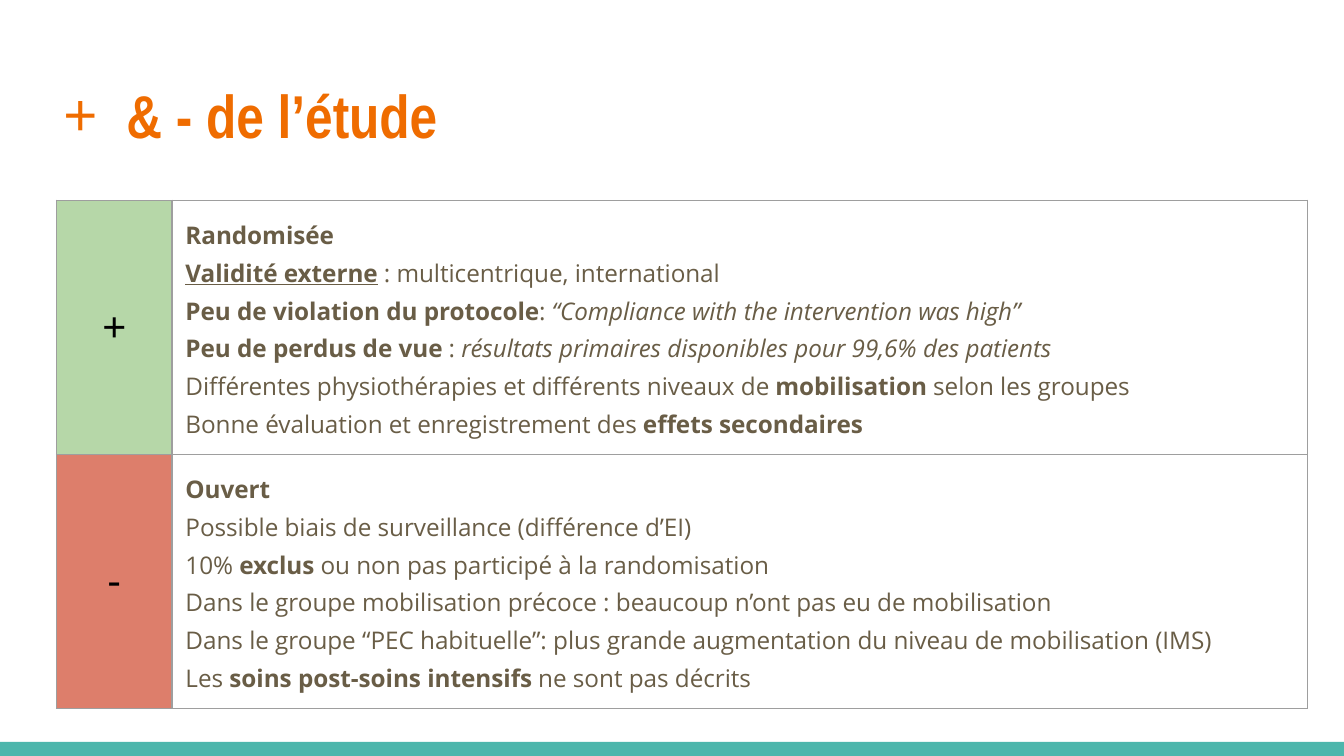
from copy import deepcopy

from lxml import etree
from pptx import Presentation
from pptx.dml.color import RGBColor
from pptx.enum.shapes import MSO_SHAPE
from pptx.enum.text import MSO_ANCHOR, PP_ALIGN
from pptx.oxml.ns import qn
from pptx.util import Inches, Pt

ORANGE, BROWN, TEAL, GREY = "EF6C00", "695D46", "4DB6AC", "9E9E9E"

# Each line is a list of (text, style): b bold, i italic, u underline
STRENGTHS = [
    [("Randomisée", "b")],
    [("Validité externe", "bu"), (" : multicentrique, international", "")],
    [("Peu de violation du protocole", "b"), (": ", ""),
     ("“Compliance with the intervention was high”", "i")],
    [("Peu de perdus de vue", "b"), (" : ", ""),
     ("résultats primaires disponibles pour 99,6% des patients", "i")],
    [("Différentes physiothérapies et différents niveaux de ", ""),
     ("mobilisation", "b"), (" selon les groupes", "")],
    [("Bonne évaluation et enregistrement des ", ""), ("effets secondaires", "b")],
]
WEAKNESSES = [
    [("Ouvert", "b")],
    [("Possible biais de surveillance (différence d’EI)", "")],
    [("10% ", ""), ("exclus", "b"), (" ou non pas participé à la randomisation", "")],
    [("Dans le groupe mobilisation précoce : beaucoup n’ont pas eu de mobilisation", "")],
    [("Dans le groupe “PEC habituelle”: plus grande augmentation du niveau de "
      "mobilisation (IMS)", "")],
    [("Les ", ""), ("soins post-soins intensifs", "b"), (" ne sont pas décrits", "")],
]


def rgb(color):
    return RGBColor.from_string(color)


def add_run(p, text, size=13, font="Open Sans", color=BROWN, style=""):
    r = p.add_run()
    r.text = text
    f = r.font
    f.size, f.name = Pt(size), font
    f.color.rgb = rgb(color)
    f.bold, f.italic, f.underline = "b" in style, "i" in style, "u" in style
    return r


def add_break(p, r):
    """Break the line, keeping the format of the run before it."""
    p.add_line_break()
    p._p.findall(qn("a:br"))[-1].append(deepcopy(r._r.rPr))


def set_bullet(p, char, color, font, left, hanging):
    pPr = p._p.get_or_add_pPr()
    pPr.set("marL", str(Inches(left)))
    pPr.set("indent", str(-Inches(hanging)))
    clr = etree.SubElement(pPr, qn("a:buClr"))
    etree.SubElement(clr, qn("a:srgbClr"), val=color)
    etree.SubElement(pPr, qn("a:buFont"), typeface=font)
    etree.SubElement(pPr, qn("a:buChar"), char=char)


def set_borders(cell, color, width):
    tcPr = cell._tc.get_or_add_tcPr()
    for i, side in enumerate(("lnL", "lnR", "lnT", "lnB")):
        ln = etree.Element(qn(f"a:{side}"), w=str(Pt(width)))
        fill = etree.SubElement(ln, qn("a:solidFill"))
        etree.SubElement(fill, qn("a:srgbClr"), val=color)
        tcPr.insert(i, ln)


def format_cell(cell, fill=None):
    cell.margin_left = cell.margin_right = Inches(0.1)
    cell.margin_top = cell.margin_bottom = Inches(0.1)
    cell.vertical_anchor = MSO_ANCHOR.MIDDLE
    if fill:
        cell.fill.solid()
        cell.fill.fore_color.rgb = rgb(fill)
    else:
        cell.fill.background()
    set_borders(cell, GREY, 0.75)


def build_title(s, x, y, w, h):
    title = s.shapes.title
    title.left, title.top, title.width, title.height = map(Inches, (x, y, w, h))
    tf = title.text_frame
    tf.margin_left = tf.margin_right = tf.margin_top = tf.margin_bottom = Inches(0.1)
    tf.vertical_anchor = MSO_ANCHOR.TOP
    p = tf.paragraphs[0]
    p.alignment = PP_ALIGN.LEFT
    set_bullet(p, "+", ORANGE, "Open Sans", 0.5, 0.47)
    add_run(p, "& - de l’étude", size=32.4, font="Arial Narrow", color=ORANGE, style="b")


def build_table(s, x, y, w, rows, sign_w=0.86):
    h = sum(row[0] for row in rows)
    table = s.shapes.add_table(len(rows), 2, *map(Inches, (x, y, w, h))).table
    table.first_row = table.horz_banding = False
    table.columns[0].width = Inches(sign_w)
    table.columns[1].width = Inches(w - sign_w)
    for i, (row_h, sign, fill, lines) in enumerate(rows):
        table.rows[i].height = Inches(row_h)
        sign_cell, text_cell = table.cell(i, 0), table.cell(i, 1)
        format_cell(sign_cell, fill)
        p = sign_cell.text_frame.paragraphs[0]
        p.alignment = PP_ALIGN.CENTER
        add_run(p, sign, size=22, font="Arial", color="000000")

        format_cell(text_cell)
        p = text_cell.text_frame.paragraphs[0]
        p.line_spacing, p.space_after = 1.15, Pt(12)
        for j, line in enumerate(lines):
            if j:
                add_break(p, r)
            for text, style in line:
                r = add_run(p, text, style=style)


def build_footer_bar(s, x, y, w, h):
    bar = s.shapes.add_shape(MSO_SHAPE.RECTANGLE, *map(Inches, (x, y, w, h)))
    bar.shadow.inherit = False
    bar.fill.solid()
    bar.fill.fore_color.rgb = rgb(TEAL)
    bar.line.fill.background()


def main():
    prs = Presentation()
    prs.slide_width = Inches(10)
    prs.slide_height = prs.slide_width * 9 // 16
    s = prs.slides.add_slide(prs.slide_layouts[5])
    build_footer_bar(s, 0, 5.52, 10, 0.11)
    build_table(s, 0.42, 1.49, 9.31,
                [(1.86, "+", "B6D7A8", STRENGTHS), (1.82, "-", "DD7E6B", WEAKNESSES)])
    build_title(s, 0.34, 0.48, 9.32, 0.77)
    prs.save("out.pptx")


if __name__ == "__main__":
    main()
